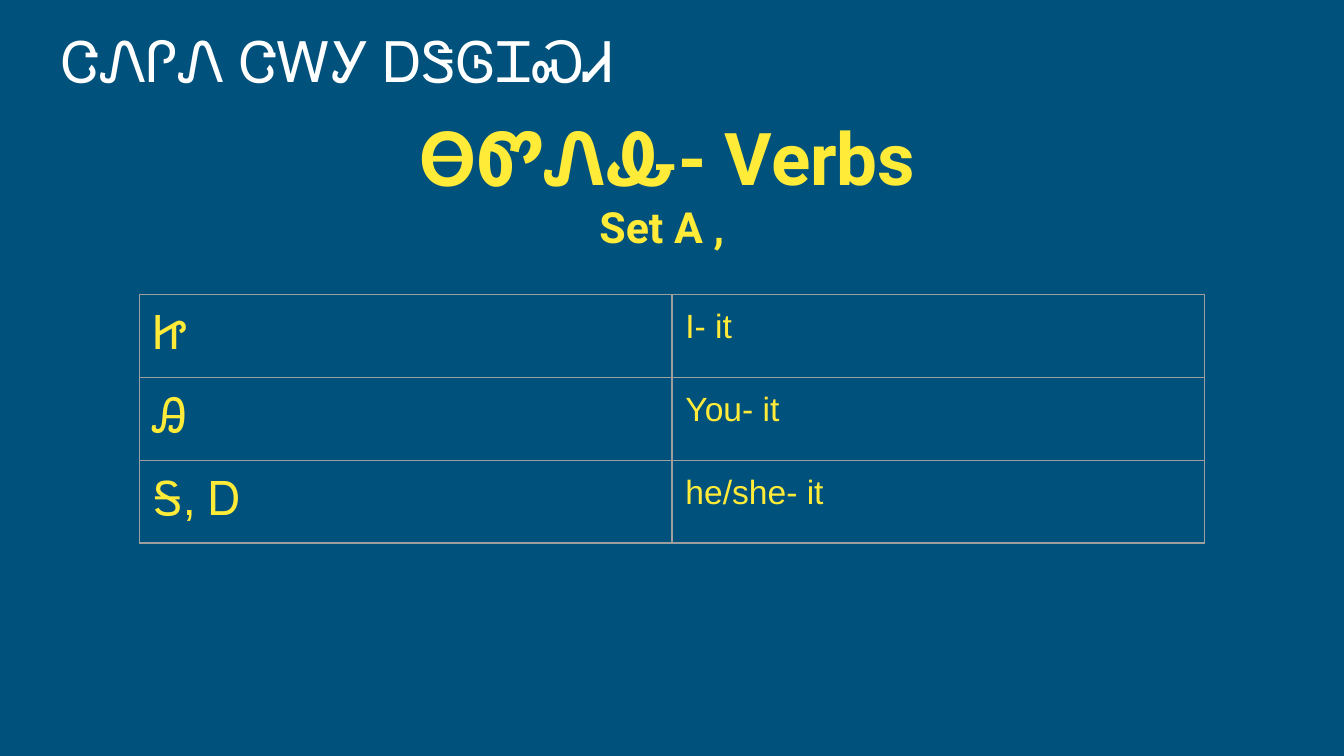
from dataclasses import dataclass

from lxml.etree import SubElement
from pptx import Presentation
from pptx.dml.color import RGBColor
from pptx.enum.text import MSO_ANCHOR, PP_ALIGN
from pptx.oxml.ns import qn
from pptx.util import Inches, Pt


@dataclass(frozen=True)
class Theme:
    background: str = "00517C"
    light: str = "FFFFFF"
    accent: str = "FFEB38"
    border: str = "9E9E9E"
    title_font: str = "Roboto Slab"
    heading_font: str = "Roboto"
    table_font: str = "Arial"
    title: int = 30
    heading: int = 39
    subheading: int = 23
    syllable: int = 25
    meaning: int = 18
    border_width: float = 0.75
    inset: float = 0.1


THEME = Theme()
MARGINS = ("margin_left", "margin_top", "margin_right", "margin_bottom")
PREFIXES = [("Ꮵ", "I- it"), ("Ꭿ", "You- it"), ("Ꭶ, Ꭰ", "he/she- it")]


def set_margins(target):
    for name in MARGINS:
        setattr(target, name, Inches(THEME.inset))


def write(p, text, color, **font):
    r = p.add_run()
    r.text = text
    r.font.color.rgb = RGBColor.from_string(color)
    for name, value in font.items():
        setattr(r.font, name, value)


def add_text_frame(s, box, anchor):
    tf = s.shapes.add_textbox(*map(Inches, box)).text_frame
    tf.word_wrap = True
    tf.vertical_anchor = anchor
    set_margins(tf)
    return tf


def add_title(s, box, text):
    tf = add_text_frame(s, box, MSO_ANCHOR.BOTTOM)
    write(tf.paragraphs[0], text, THEME.light, name=THEME.title_font, size=Pt(THEME.title))


def add_heading(s, box, heading, subheading):
    tf = add_text_frame(s, box, MSO_ANCHOR.TOP)
    lines = [
        (tf.paragraphs[0], heading, THEME.heading),
        (tf.add_paragraph(), subheading, THEME.subheading),
    ]
    for p, text, size in lines:
        p.alignment = PP_ALIGN.CENTER
        write(p, text, THEME.accent, name=THEME.heading_font, size=Pt(size), bold=True)


def add_borders(cell):
    tc_pr = cell._tc.get_or_add_tcPr()
    for side in ("a:lnL", "a:lnR", "a:lnT", "a:lnB"):
        line = SubElement(tc_pr, qn(side), w=str(Pt(THEME.border_width)))
        fill = SubElement(line, qn("a:solidFill"))
        SubElement(fill, qn("a:srgbClr"), val=THEME.border)


def add_prefix_table(s, box, rows):
    sizes = (THEME.syllable, THEME.meaning)
    table = s.shapes.add_table(len(rows), len(sizes), *map(Inches, box)).table
    table.first_row = table.horz_banding = False
    for i, row in enumerate(rows):
        for j, (text, size) in enumerate(zip(row, sizes)):
            cell = table.cell(i, j)
            set_margins(cell)
            add_borders(cell)
            cell.fill.background()
            write(cell.text_frame.paragraphs[0], text, THEME.accent,
                  name=THEME.table_font, size=Pt(size))


def build_slide(prs):
    s = prs.slides.add_slide(prs.slide_layouts[6])
    fill = s.background.fill
    fill.solid()
    fill.fore_color.rgb = RGBColor.from_string(THEME.background)
    add_title(s, (0.36, 0.05, 9.15, 0.75), "ᏣᏁᎵᏁ ᏣᎳᎩ ᎠᏕᎶᏆᏍᏗ")
    add_heading(s, (1.74, 0.74, 6.45, 1.25), "ᎾᏛᏁᎲ- Verbs", "Set A , ")
    add_prefix_table(s, (1.04, 2.19, 7.92, 1.26), PREFIXES)


def main():
    prs = Presentation()
    prs.slide_width = Inches(10)
    prs.slide_height = prs.slide_width * 9 // 16
    build_slide(prs)
    prs.save("out.pptx")


if __name__ == "__main__":
    main()
